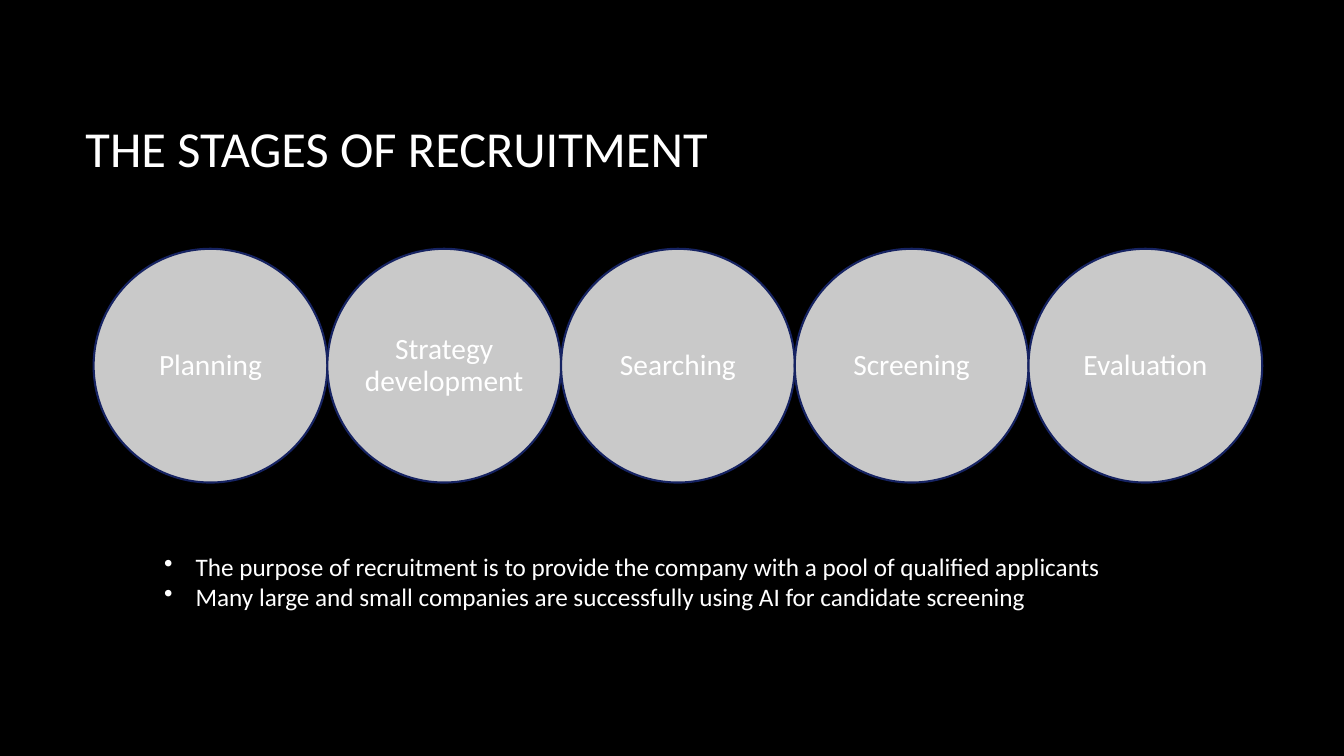
from dataclasses import dataclass

import pptx
import pptx.dml.color
import pptx.enum.shapes
import pptx.enum.text
import pptx.oxml.ns
import pptx.util
from lxml import etree
from pptx.util import Cm

BLACK = pptx.dml.color.RGBColor(0x00, 0x00, 0x00)
WHITE = pptx.dml.color.RGBColor(0xFF, 0xFF, 0xFF)
NAVY = pptx.dml.color.RGBColor(0x16, 0x23, 0x62)

FONT = "Calibri"
DIAMETER = 5.89
FIRST_LEFT = 2.36
STAGES_TOP = 6.27
FILL_OPACITY = 79
BULLET_INDENT = Cm(0.79)


@dataclass
class Stage:
    label: str
    left: float


STAGES = [
    Stage(label, FIRST_LEFT + position * DIAMETER)
    for position, label in enumerate(
        ["Planning", "Strategy development", "Searching", "Screening", "Evaluation"]
    )
]

REMARKS = [
    "The purpose of recruitment is to provide the company with a pool of qualified applicants",
    "Many large and small companies are successfully using AI for candidate screening",
]


def style_font(paragraph, size: float) -> None:
    paragraph.font.name = FONT
    paragraph.font.size = pptx.util.Pt(size)
    paragraph.font.color.rgb = WHITE


def set_opacity(shape, percent: int) -> None:
    color = shape.fill._xPr.find(".//" + pptx.oxml.ns.qn("a:srgbClr"))
    alpha = etree.SubElement(color, pptx.oxml.ns.qn("a:alpha"))
    alpha.set("val", str(percent * 1000))


def add_bullet(paragraph) -> None:
    properties = paragraph._p.get_or_add_pPr()
    properties.set("marL", str(BULLET_INDENT))
    properties.set("indent", str(-BULLET_INDENT))
    bullet = etree.SubElement(properties, pptx.oxml.ns.qn("a:buChar"))
    bullet.set("char", "•")


def draw_title(slide) -> None:
    title = slide.shapes.title
    title.left, title.top, title.width, title.height = Cm(1.9), Cm(1.7), Cm(28.14), Cm(4.04)
    title.text_frame.text = "THE STAGES OF RECRUITMENT"
    title.text_frame.vertical_anchor = pptx.enum.text.MSO_ANCHOR.MIDDLE
    heading = title.text_frame.paragraphs[0]
    heading.alignment = pptx.enum.text.PP_ALIGN.LEFT
    style_font(heading, 36)


def draw_stage(shapes, stage: Stage) -> None:
    circle = shapes.add_shape(
        pptx.enum.shapes.MSO_SHAPE.OVAL,
        Cm(stage.left), Cm(STAGES_TOP), Cm(DIAMETER), Cm(DIAMETER),
    )
    circle.shadow.inherit = False
    circle.fill.solid()
    circle.fill.fore_color.rgb = WHITE
    set_opacity(circle, FILL_OPACITY)
    circle.line.color.rgb = NAVY
    circle.line.width = pptx.util.Pt(1.5)

    frame = circle.text_frame
    frame.margin_left = frame.margin_right = frame.margin_top = frame.margin_bottom = 0
    frame.word_wrap = True
    frame.vertical_anchor = pptx.enum.text.MSO_ANCHOR.MIDDLE
    frame.text = stage.label
    label = frame.paragraphs[0]
    label.alignment = pptx.enum.text.PP_ALIGN.CENTER
    label.line_spacing = 0.9
    style_font(label, 21)


def draw_remarks(slide) -> None:
    remarks = slide.shapes.add_textbox(Cm(3.89), Cm(13.77), Cm(26.44), Cm(1.8))
    frame = remarks.text_frame
    frame.word_wrap = True
    frame.auto_size = pptx.enum.text.MSO_AUTO_SIZE.SHAPE_TO_FIT_TEXT
    frame.text = "\n".join(REMARKS)
    for remark in frame.paragraphs:
        add_bullet(remark)
        style_font(remark, 18)


def main() -> None:
    presentation = pptx.Presentation()
    presentation.slide_width = Cm(33.87)
    presentation.slide_height = Cm(19.05)
    slide = presentation.slides.add_slide(presentation.slide_layouts.get_by_name("Title Only"))
    slide.background.fill.solid()
    slide.background.fill.fore_color.rgb = BLACK

    draw_title(slide)
    stage_row = slide.shapes.add_group_shape()
    for stage in STAGES:
        draw_stage(stage_row.shapes, stage)
    draw_remarks(slide)
    presentation.save("out.pptx")


if __name__ == "__main__":
    main()
